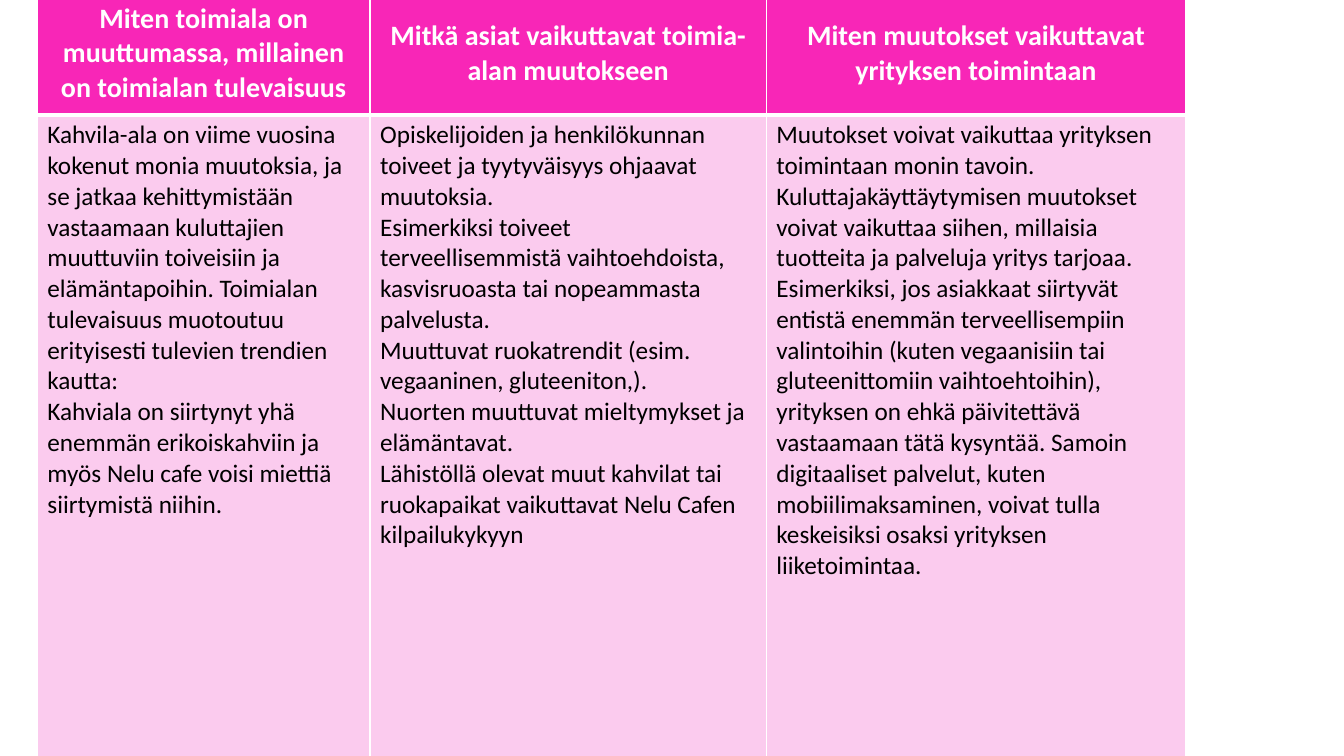
from lxml import etree
from pptx import Presentation
from pptx import util as u
from pptx.dml.color import RGBColor
from pptx.enum import text
from pptx.oxml.ns import qn

PX = 9144  # 100 px to the inch


def px(n):
    return u.Emu(n * PX)


def rgb(code):
    return RGBColor.from_string(code)


class Deck:
    font = "Calibri"
    pink = "F826B7"
    pale = "FBCBEE"
    white = "FFFFFF"
    black = "000000"

    def __init__(self, wide, high):
        self.prs = Presentation()
        self.prs.slide_width, self.prs.slide_height = px(wide), px(high)
        self.slide = self.prs.slides.add_slide(self.prs.slide_layouts[6])

    def table(self, left, top, cols, rows):
        frame = self.slide.shapes.add_table(
            len(rows), len(cols), px(left), px(top), px(sum(cols)), px(sum(rows)))
        grid = frame.table
        for col, wide in zip(grid.columns, cols):
            col.width = px(wide)
        for row, high in zip(grid.rows, rows):
            row.height = px(high)
        return grid

    def edges(self, cell, **widths):
        props = cell._tc.get_or_add_tcPr()
        for pos, side in enumerate("LRTB"):
            line = etree.Element(qn("a:ln" + side), w=str(u.Pt(widths.get(side, 1))))
            fill = etree.SubElement(line, qn("a:solidFill"))
            etree.SubElement(fill, qn("a:srgbClr"), val=self.white)
            props.insert(pos, line)

    def label(self, cell, paras, size, color, bold, align):
        cell.text = "\n".join(paras)
        for para in cell.text_frame.paragraphs:
            para.alignment = align
            font = para.font
            font.name, font.size, font.bold = self.font, u.Pt(size), bold
            font.color.rgb = rgb(color)

    def fill(self, cell, color):
        cell.fill.solid()
        cell.fill.fore_color.rgb = rgb(color)

    def head(self, cell, title):
        self.label(cell, [title], 20, self.white, True, text.PP_ALIGN.CENTER)
        cell.vertical_anchor = text.MSO_ANCHOR.MIDDLE
        self.fill(cell, self.pink)
        self.edges(cell, B=3)

    def body(self, cell, paras):
        self.label(cell, paras, 18, self.black, False, text.PP_ALIGN.LEFT)
        self.fill(cell, self.pale)
        self.edges(cell, T=3)


# Column width, heading and paragraphs
TOPICS = [
    (330, "Miten toimiala on muuttumassa, millainen on toimialan tulevaisuus", [
        "Kahvila-ala on viime vuosina kokenut monia muutoksia, ja se jatkaa "
        "kehittymistään vastaamaan kuluttajien muuttuviin toiveisiin ja "
        "elämäntapoihin. Toimialan tulevaisuus muotoutuu erityisesti tulevien "
        "trendien kautta:",
        "Kahviala on siirtynyt yhä enemmän erikoiskahviin ja myös Nelu cafe "
        "voisi miettiä siirtymistä niihin.",
    ]),
    (393, "Mitkä asiat vaikuttavat toimia-alan muutokseen", [
        "Opiskelijoiden ja henkilökunnan toiveet ja tyytyväisyys ohjaavat muutoksia.",
        "Esimerkiksi toiveet terveellisemmistä vaihtoehdoista, kasvisruoasta "
        "tai nopeammasta palvelusta.",
        "Muuttuvat ruokatrendit (esim. vegaaninen, gluteeniton,).",
        "Nuorten muuttuvat mieltymykset ja elämäntavat.",
        "Lähistöllä olevat muut kahvilat tai ruokapaikat vaikuttavat Nelu Cafen "
        "kilpailukykyyn",
    ]),
    (416, "Miten muutokset vaikuttavat yrityksen toimintaan", [
        "Muutokset voivat vaikuttaa yrityksen toimintaan monin tavoin. "
        "Kuluttajakäyttäytymisen muutokset voivat vaikuttaa siihen, millaisia "
        "tuotteita ja palveluja yritys tarjoaa. Esimerkiksi, jos asiakkaat "
        "siirtyvät entistä enemmän terveellisempiin valintoihin (kuten "
        "vegaanisiin tai gluteenittomiin vaihtoehtoihin), yrityksen on ehkä "
        "päivitettävä vastaamaan tätä kysyntää. Samoin digitaaliset palvelut, "
        "kuten mobiilimaksaminen, voivat tulla keskeisiksi osaksi yrityksen "
        "liiketoimintaa.",
    ]),
]


def main():
    deck = Deck(1333, 750)

    # Table of topics, running past the top and bottom edges
    grid = deck.table(37, -8, [wide for wide, _, _ in TOPICS], [122, 707])
    for col, (_, title, paras) in enumerate(TOPICS):
        deck.head(grid.cell(0, col), title)
        deck.body(grid.cell(1, col), paras)

    deck.prs.save("out.pptx")


if __name__ == "__main__":
    main()
